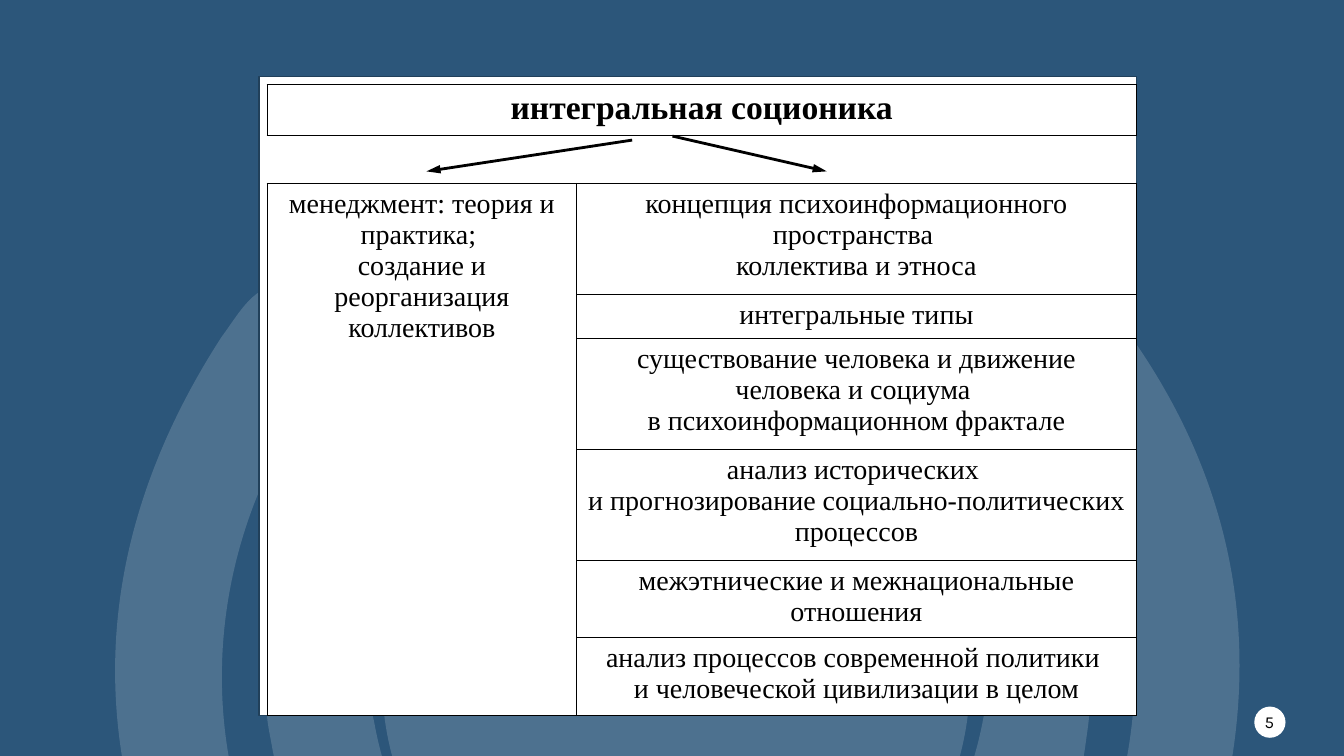
from dataclasses import dataclass

from lxml.etree import SubElement
from pptx import Presentation
from pptx.dml.color import RGBColor
from pptx.enum.shapes import MSO_CONNECTOR, MSO_SHAPE
from pptx.enum.text import MSO_ANCHOR, PP_ALIGN
from pptx.oxml.ns import qn
from pptx.util import Inches, Pt

BLUE = RGBColor(0x2C, 0x56, 0x7A)
NAVY = RGBColor(0x21, 0x40, 0x5A)
WHITE = RGBColor(0xFF, 0xFF, 0xFF)
BLACK = RGBColor(0x00, 0x00, 0x00)
SERIF = "Times New Roman"
TOPIC_SIZE = 20
RING_OPACITY = 16
UNITS_PER_INCH = 100

Point = tuple[float, float]


@dataclass
class Ring:
    """Closed outline: a start point, then cubic segments of three points each."""
    start: Point
    curves: list[tuple[float, float, float, float, float, float]]


@dataclass
class Arrow:
    start: Point
    end: Point


@dataclass
class Topic:
    row: int
    column: int
    lines: list[str]
    size: int = TOPIC_SIZE
    bold: bool = False


OUTER_RING = Ring((6.4, 12.38), [
    (4.53, 12.27, 2.82, 11.31, 1.8, 9.3), (0.78, 7.25, 0.97, 5.24, 2.2, 3.34),
    (2.38, 3.1, 2.52, 2.8, 2.86, 2.82), (3.33, 2.84, 3.48, 3.37, 3.14, 3.85),
    (1.63, 5.96, 1.97, 8.75, 3.95, 10.33), (5.7, 11.72, 8.21, 11.59, 9.81, 10.04),
    (11.47, 8.45, 11.73, 5.92, 10.43, 4.02), (10.38, 3.95, 10.34, 3.87, 10.28, 3.8),
    (10, 3.5, 10, 3.21, 10.34, 2.93), (10.72, 2.62, 10.94, 2.93, 11.11, 3.19),
    (12.21, 4.67, 12.56, 6.33, 12.09, 8.14), (11.45, 10.65, 9.23, 12.35, 6.4, 12.38),
])
INNER_RING = Ring((6.74, 10.85), [
    (4.72, 10.85, 3.08, 9.45, 2.7, 7.42), (2.65, 7.12, 2.52, 6.75, 2.99, 6.66),
    (3.4, 6.57, 3.63, 6.7, 3.72, 7.21), (4.02, 8.78, 5.27, 9.82, 6.74, 9.8),
    (8.21, 9.8, 9.45, 8.73, 9.75, 7.14), (9.83, 6.68, 10.07, 6.6, 10.45, 6.64),
    (10.9, 6.7, 10.81, 7.05, 10.77, 7.36), (10.51, 9.32, 8.77, 10.85, 6.74, 10.85),
])
ARROWS = [Arrow((6.27, 1.39), (4.23, 1.7)), Arrow((6.67, 1.35), (8.2, 1.7))]

COLUMN_WIDTHS = [3.07, 5.55]
ROW_HEIGHTS = [0.43, 0.48, 1.1, 0.43, 1.1, 1.1, 0.77, 0.77]
ARROW_ROW = 1
BRANCH_ROW = 2
TOPICS = [
    Topic(0, 0, ["интегральная соционика"], 24, True),
    Topic(BRANCH_ROW, 0, ["менеджмент: теория и практика; ",
                          "создание и реорганизация коллективов"]),
] + [Topic(row, 1, lines) for row, lines in enumerate([
    ["концепция психоинформационного пространства ", "коллектива и этноса"],
    ["интегральные типы"],
    ["существование человека и движение человека и социума ",
     "в психоинформационном фрактале"],
    ["анализ исторических ", "и прогнозирование социально-политических процессов"],
    ["межэтнические и межнациональные отношения"],
    ["анализ процессов современной политики ", "и человеческой цивилизации в целом"],
], BRANCH_ROW)]


def style_shape(shape, opacity: int = 100) -> None:
    shape.shadow.inherit = False
    shape.fill.solid()
    shape.fill.fore_color.rgb = WHITE
    shape.line.fill.background()
    if opacity < 100:
        color = shape.fill._xPr.find(qn("a:solidFill"))[0]
        SubElement(color, qn("a:alpha"), val=str(opacity * 1000))


def add_preset(slide, kind, left: float, top: float, width: float, height: float,
               opacity: int = 100):
    shape = slide.shapes.add_shape(kind, Inches(left), Inches(top),
                                   Inches(width), Inches(height))
    style_shape(shape, opacity)
    return shape


def add_ring(slide, ring: Ring) -> None:
    def to_units(x: float, y: float) -> Point:
        return round(x * UNITS_PER_INCH), round(y * UNITS_PER_INCH)

    builder = slide.shapes.build_freeform(*to_units(*ring.start),
                                          scale=Inches(1) / UNITS_PER_INCH)
    builder.add_line_segments([to_units(*curve[i:i + 2])
                               for curve in ring.curves for i in (0, 2, 4)], close=True)
    shape = builder.convert_to_shape()

    # Join every three segments into one cubic curve
    segments = list(shape._element.iter(qn("a:lnTo")))
    for first in range(0, len(segments), 3):
        curve = segments[first].makeelement(qn("a:cubicBezTo"))
        segments[first].addprevious(curve)
        for segment in segments[first:first + 3]:
            curve.append(segment[0])
            segment.getparent().remove(segment)
    style_shape(shape, RING_OPACITY)


def add_arrow(slide, arrow: Arrow) -> None:
    line = slide.shapes.add_connector(
        MSO_CONNECTOR.STRAIGHT, *(Inches(v) for v in arrow.start + arrow.end))
    line.line.color.rgb = BLACK
    line.line.width = Pt(2)
    SubElement(line.line._get_or_add_ln(), qn("a:tailEnd"), type="triangle",
               w="med", len="lg")
    SubElement(line._element.spPr, qn("a:effectLst"))


def add_run(paragraph, text: str, size: int, font: str, bold: bool = False) -> None:
    run = paragraph.add_run()
    run.text = text
    run.font.size = Pt(size)
    run.font.name = font
    run.font.bold = bold
    run.font.color.rgb = BLACK


def set_borders(cell, visible: str) -> None:
    properties = cell._tc.get_or_add_tcPr()
    for side in "LRTB":
        border = SubElement(properties, qn(f"a:ln{side}"), w=str(Pt(1)))
        if side in visible:
            fill = SubElement(border, qn("a:solidFill"))
            SubElement(fill, qn("a:srgbClr"), val=str(BLACK))
        else:
            SubElement(border, qn("a:noFill"))


def add_topic_table(slide) -> None:
    table = slide.shapes.add_table(
        len(ROW_HEIGHTS), len(COLUMN_WIDTHS), Inches(2.65), Inches(0.84),
        Inches(sum(COLUMN_WIDTHS)), Inches(sum(ROW_HEIGHTS))).table
    table.first_row = table.horz_banding = False
    for column, width in zip(table.columns, COLUMN_WIDTHS):
        column.width = Inches(width)
    for index, (row, height) in enumerate(zip(table.rows, ROW_HEIGHTS)):
        row.height = Inches(height)
        for cell in row.cells:
            set_borders(cell, "TB" if index == ARROW_ROW else "LRTB")
            cell.fill.background()
    table.cell(0, 0).merge(table.cell(0, 1))
    table.cell(BRANCH_ROW, 0).merge(table.cell(len(ROW_HEIGHTS) - 1, 0))
    for topic in TOPICS:
        paragraph = table.cell(topic.row, topic.column).text_frame.paragraphs[0]
        paragraph.alignment = PP_ALIGN.CENTER
        for index, text in enumerate(topic.lines):
            if index:
                paragraph.add_line_break()
            add_run(paragraph, text, topic.size, SERIF, topic.bold)

    # Paragraph ends share the serif font, so rows keep their height
    for cell in table.iter_cells():
        paragraph = cell.text_frame.paragraphs[0]
        size = paragraph.runs[0].font.size if paragraph.runs else Pt(TOPIC_SIZE)
        ending = SubElement(paragraph._p, qn("a:endParaRPr"), sz=str(int(size.pt * 100)))
        SubElement(ending, qn("a:latin"), typeface=SERIF)


def add_page_number(slide) -> None:
    number = slide.shapes.add_textbox(Inches(12.43), Inches(7.06), Inches(0.32), Inches(0.2))
    frame = number.text_frame
    frame.word_wrap = True
    frame.vertical_anchor = MSO_ANCHOR.MIDDLE
    frame.margin_left = frame.margin_right = frame.margin_top = frame.margin_bottom = 0
    frame.paragraphs[0].alignment = PP_ALIGN.CENTER
    add_run(frame.paragraphs[0], "5", 12, "Karla")


def main() -> None:
    deck = Presentation()
    deck.slide_width, deck.slide_height = Inches(13.33), Inches(7.5)
    slide = deck.slides.add_slide(deck.slide_layouts[6])

    # Backdrop with rings
    slide.background.fill.solid()
    slide.background.fill.fore_color.rgb = BLUE
    add_preset(slide, MSO_SHAPE.OVAL, 12.44, 7.01, 0.31, 0.31)
    add_preset(slide, MSO_SHAPE.OVAL, 3.79, 3.83, 5.83, 5.83, RING_OPACITY)
    for ring in (OUTER_RING, INNER_RING):
        add_ring(slide, ring)

    # White panel
    panel = add_preset(slide, MSO_SHAPE.RECTANGLE, 2.57, 0.76, 8.7, 6.34)
    panel.line.color.rgb = NAVY
    panel.line.width = Pt(1)

    # Page number, topics and arrows
    add_page_number(slide)
    add_topic_table(slide)
    for arrow in ARROWS:
        add_arrow(slide, arrow)
    deck.save("out.pptx")


if __name__ == "__main__":
    main()
